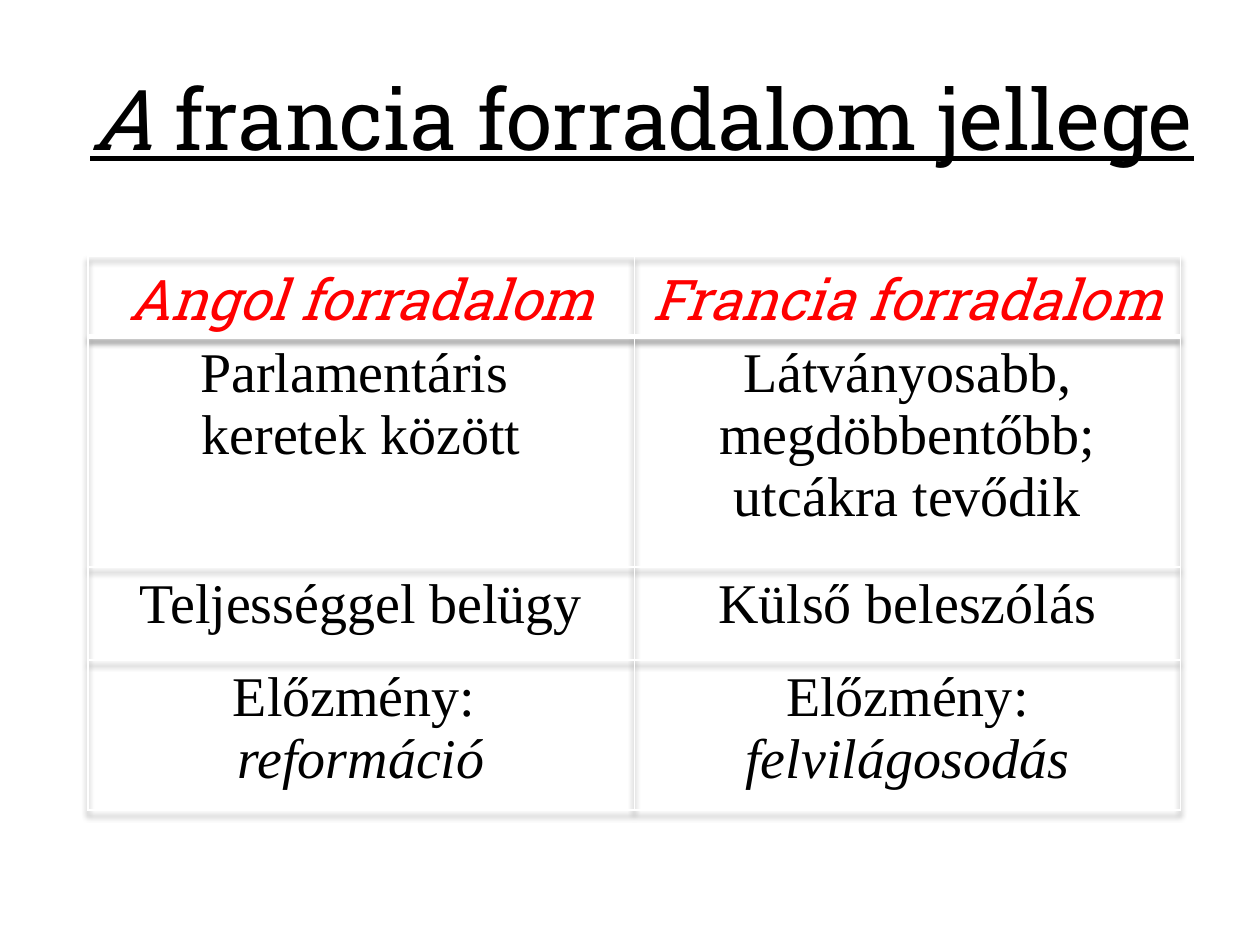
from lxml import etree
from pptx import Presentation
from pptx.dml.color import RGBColor
from pptx.enum.text import MSO_ANCHOR, PP_ALIGN
from pptx.oxml.ns import qn
from pptx.util import Inches, Pt

CENTER = PP_ALIGN.CENTER
MIDDLE = MSO_ANCHOR.MIDDLE
COLORS = {"text": "000000", "heading": "FF0000", "border": "FFFFFF",
          "shadow": "000000"}
HEADING_FONT, BODY_FONT = "Roboto Slab", "Times New Roman"
WIDTH, HEIGHT = Inches(10), Inches(7.5)

# Boxes as shares of the slide: left, top, width, height
TITLE_BOX = (0.05, 0.04, 0.919, 0.1667)
TABLE_BOX = (0.07, 0.2707, 0.867, 0.5867)
ROW_SHARES = (0.145, 0.416, 0.168, 0.271)

# Each cell is a list of lines; each line is a list of (text, italic) runs
ROWS = [
    [[[("Angol forradalom", True)]], [[("Francia forradalom", True)]]],
    [[[("Parlamentáris ", False)], [("keretek között", False)]],
     [[("Látványosabb, megdöbbentőbb; utcákra tevődik", False)]]],
    [[[("Teljességgel belügy", False)]], [[("Külső beleszólás", False)]]],
    [[[("Előzmény: ", False)], [("reformáció", True)]],
     [[("Előzmény: ", False), ("felvilágosodás", True)]]],
]


def to_lengths(box):
    left, top, width, height = box
    return (int(left * WIDTH), int(top * HEIGHT),
            int(width * WIDTH), int(height * HEIGHT))


def write_lines(paragraph, lines, font_name, size, color):
    paragraph.alignment = CENTER
    paragraph.font.name = font_name
    paragraph.font.size = Pt(size)
    paragraph.font.color.rgb = RGBColor.from_string(COLORS[color])
    for index, line in enumerate(lines):
        if index:
            paragraph.add_line_break()
        for text, italic in line:
            run = paragraph.add_run()
            run.text = text
            run.font.italic = italic


def add_color(parent, color):
    return etree.SubElement(parent, qn("a:srgbClr"), val=COLORS[color])


def set_borders(cell, widths):
    properties = cell._tc.get_or_add_tcPr()
    for side, width in widths.items():
        line = etree.SubElement(properties, qn(f"a:ln{side}"), w=str(Pt(width)))
        add_color(etree.SubElement(line, qn("a:solidFill")), "border")


def add_table_shadow(table):
    effects = etree.Element(qn("a:effectLst"))
    shadow = etree.SubElement(effects, qn("a:outerShdw"), blurRad=str(Pt(3)),
                              dist=str(Pt(3)), dir="5400000", rotWithShape="0")
    etree.SubElement(add_color(shadow, "shadow"), qn("a:alpha"), val="45000")
    table._tbl.tblPr.insert(0, effects)


def add_title(slide, box):
    frame = slide.shapes.add_textbox(*to_lengths(box)).text_frame
    frame.word_wrap = True
    frame.vertical_anchor = MIDDLE
    paragraph = frame.paragraphs[0]
    write_lines(paragraph, [[("A", True), (" francia forradalom jellege", False)]],
                HEADING_FONT, 48, "text")
    paragraph.font.underline = True


def add_comparison(slide, box):
    left, top, width, height = to_lengths(box)
    table = slide.shapes.add_table(len(ROWS), len(ROWS[0]), left, top,
                                   width, height).table
    table.first_row = table.horz_banding = False
    add_table_shadow(table)
    for row_index, (cells, share) in enumerate(zip(ROWS, ROW_SHARES)):
        table.rows[row_index].height = int(height * share)
        is_header = row_index == 0
        font_name, color = ((HEADING_FONT, "heading") if is_header
                            else (BODY_FONT, "text"))
        borders = {"L": 1, "R": 1, "T": 3 if row_index == 1 else 1,
                   "B": 3 if is_header else 1}
        for column_index, lines in enumerate(cells):
            cell = table.cell(row_index, column_index)
            set_borders(cell, borders)
            cell.fill.background()
            write_lines(cell.text_frame.paragraphs[0], lines, font_name, 32, color)


def main():
    presentation = Presentation()
    presentation.slide_width, presentation.slide_height = WIDTH, HEIGHT
    slide = presentation.slides.add_slide(presentation.slide_layouts[6])
    add_title(slide, TITLE_BOX)
    add_comparison(slide, TABLE_BOX)
    presentation.save("out.pptx")


if __name__ == "__main__":
    main()
